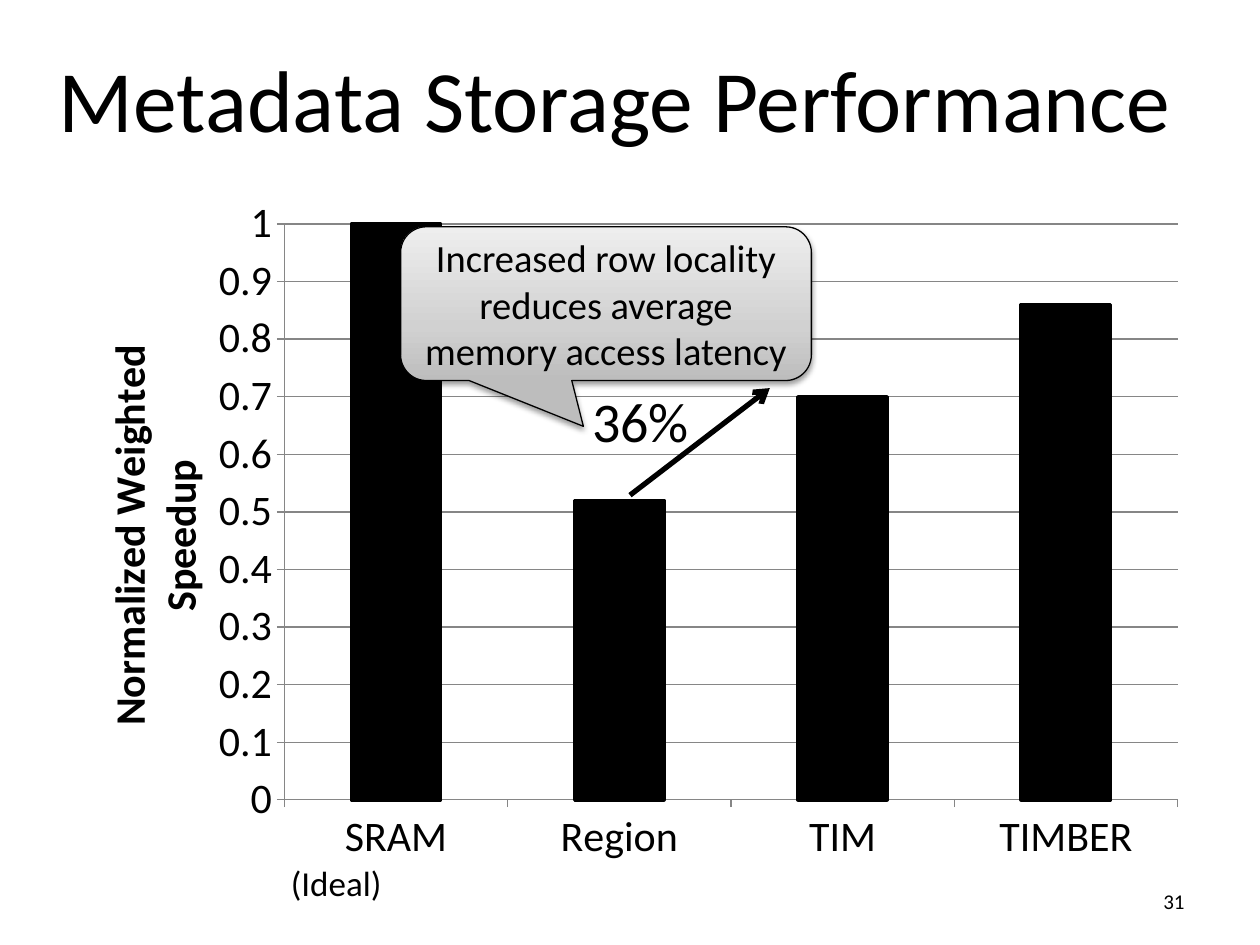
from lxml import etree
from pptx import Presentation
from pptx import util as u
from pptx.chart.data import CategoryChartData
from pptx.dml.color import RGBColor
from pptx.enum import chart as charts, shapes, text
from pptx.oxml import parse_xml
from pptx.oxml.ns import nsdecls, qn

FONT = "Calibri"
COLORS = {
    "ink": "000000",
    "grid": "868686",
    "callout_dark": "BDBDBD",
    "callout_mid": "D1D1D1",
    "callout_light": "EEEEEE",
}


def color(name):
    return RGBColor.from_string(COLORS[name])


def write(frame, words, size, align=text.PP_ALIGN.LEFT,
          anchor=text.MSO_ANCHOR.TOP, wrap=True):
    """Put one formatted paragraph into a text frame."""
    frame.word_wrap = wrap
    frame.vertical_anchor = anchor
    if not wrap:
        frame.auto_size = text.MSO_AUTO_SIZE.SHAPE_TO_FIT_TEXT
    paragraph = frame.paragraphs[0]
    paragraph.alignment = align
    run = paragraph.add_run()
    run.text = words
    run.font.size = u.Pt(size)
    run.font.name = FONT
    run.font.color.rgb = color("ink")


def set_layout(parent, **fractions):
    """Place a chart part by fractions of the chart's size."""
    layout = parent.find(qn("c:layout"))
    if layout is None:
        layout = etree.Element(qn("c:layout"))
        before = parent.find(qn("c:tx"))
        parent.insert(0 if before is None else parent.index(before) + 1, layout)
    for child in list(layout):
        layout.remove(child)
    manual = etree.SubElement(layout, qn("c:manualLayout"))
    if "w" in fractions:
        etree.SubElement(manual, qn("c:layoutTarget"), val="inner")
    for mode in ("xMode", "yMode"):
        etree.SubElement(manual, qn("c:" + mode), val="edge")
    for key, value in fractions.items():
        etree.SubElement(manual, qn("c:" + key), val=str(value))


class SlideBuilder:
    def __init__(self, slide):
        self.slide = slide

    def label(self, box, words, size, **style):
        shape = self.slide.shapes.add_textbox(*map(u.Inches, box))
        write(shape.text_frame, words, size, **style)

    def column_chart(self, box, categories, values, axis_title):
        data = CategoryChartData()
        data.categories = categories
        data.add_series("Series 1", values)
        chart = self.slide.shapes.add_chart(
            charts.XL_CHART_TYPE.COLUMN_CLUSTERED, *map(u.Inches, box), data).chart
        chart.has_legend = False
        chart.has_title = False
        chart.font.size = u.Pt(24)
        chart.font.name = FONT
        chart.font.color.rgb = color("ink")

        # Columns
        plot = chart.plots[0]
        plot.gap_width = 150
        plot.vary_by_categories = False
        columns = plot.series[0].format
        columns.fill.solid()
        columns.fill.fore_color.rgb = color("ink")
        columns.line.color.rgb = color("ink")
        columns.line.width = u.Pt(2)

        # Axes and gridlines
        value_axis = chart.value_axis
        value_axis.minimum_scale = 0
        value_axis.maximum_scale = 1
        value_axis.major_unit = 0.1
        value_axis.has_major_gridlines = True
        for axis in (chart.category_axis, value_axis):
            axis.major_tick_mark = charts.XL_TICK_MARK.OUTSIDE
        for part in (chart.category_axis, value_axis, value_axis.major_gridlines):
            part.format.line.color.rgb = color("grid")
            part.format.line.width = u.Pt(0.75)

        # Axis title
        title = value_axis.axis_title
        paragraph = title.text_frame.paragraphs[0]
        run = paragraph.add_run()
        run.text = axis_title
        run.font.size = u.Pt(24)
        run.font.name = FONT
        run.font.bold = True
        run.font.color.rgb = color("ink")
        body = title.text_frame._txBody.find(qn("a:bodyPr"))
        body.set("rot", "-5400000")
        body.set("vert", "horz")
        set_layout(title._element, x=0.04, y=0.22)
        plot_area = chart._chartSpace.chart.plotArea
        set_layout(plot_area, x=0.206, y=0.056, w=0.774, h=0.831)

    def arrow(self, start, end, width):
        line = self.slide.shapes.add_connector(
            shapes.MSO_CONNECTOR.STRAIGHT, *map(u.Inches, start + end))
        line.line.color.rgb = color("ink")
        line.line.width = u.Pt(width)
        etree.SubElement(line.line._get_or_add_ln(), qn("a:tailEnd"), type="arrow")
        etree.SubElement(line._element.spPr, qn("a:effectLst"))

    def callout(self, box, words, size, adjustments, stops):
        shape = self.slide.shapes.add_shape(
            shapes.MSO_SHAPE.ROUNDED_RECTANGULAR_CALLOUT, *map(u.Inches, box))
        for index, value in enumerate(adjustments):
            shape.adjustments[index] = value
        shape.line.color.rgb = color("ink")
        shape.line.width = u.Pt(0.75)
        write(shape.text_frame, words, size, align=text.PP_ALIGN.CENTER,
              anchor=text.MSO_ANCHOR.MIDDLE)

        # Gradient from bottom to top
        stop_xml = "".join(
            f'<a:gs pos="{place * 1000}"><a:srgbClr val="{COLORS[name]}"/></a:gs>'
            for place, name in stops)
        properties = shape._element.spPr
        properties.find(qn("a:prstGeom")).addnext(parse_xml(
            f'<a:gradFill {nsdecls("a")} rotWithShape="1"><a:gsLst>{stop_xml}</a:gsLst>'
            '<a:lin ang="16200000" scaled="0"/></a:gradFill>'))

        # Soft shadow below
        properties.append(parse_xml(
            f'<a:effectLst {nsdecls("a")}><a:outerShdw blurRad="{u.Pt(3.1)}" '
            f'dist="{u.Pt(1.6)}" dir="5400000" rotWithShape="0">'
            f'<a:srgbClr val="{COLORS["ink"]}"><a:alpha val="38000"/></a:srgbClr>'
            '</a:outerShdw></a:effectLst>'))


def main():
    presentation = Presentation()
    presentation.slide_width = u.Inches(10)
    presentation.slide_height = u.Inches(7.5)
    builder = SlideBuilder(presentation.slides.add_slide(presentation.slide_layouts[6]))

    # Speedup chart
    builder.column_chart((0.37, 1.47, 9.16, 5.5),
                         ("SRAM", "Region", "TIM", "TIMBER"),
                         (1, 0.52, 0.7, 0.86), "Normalized Weighted Speedup")

    # Slide number and title
    builder.label((7.17, 6.95, 2.33, 0.4), "31", 12, align=text.PP_ALIGN.RIGHT,
                  anchor=text.MSO_ANCHOR.MIDDLE)
    builder.label((0.37, 0.46, 9.16, 0.62), "Metadata Storage Performance", 50,
                  anchor=text.MSO_ANCHOR.MIDDLE)

    # Gain from Region to TIM
    builder.arrow((5, 3.93), (6.11, 3.08), 3)
    builder.label((4.6, 3.02, 0.98, 0.64), "36%", 32, wrap=False)
    builder.callout((3.18, 1.8, 3.26, 1.22),
                    "Increased row locality reduces average memory access latency", 22,
                    (-0.055, 0.798, 0.167),
                    ((0, "callout_dark"), (35, "callout_mid"), (100, "callout_light")))

    # Note under the first category
    builder.label((2.21, 6.79, 0.93, 0.44), "(Ideal)", 20, wrap=False)

    presentation.save("out.pptx")


if __name__ == "__main__":
    main()
